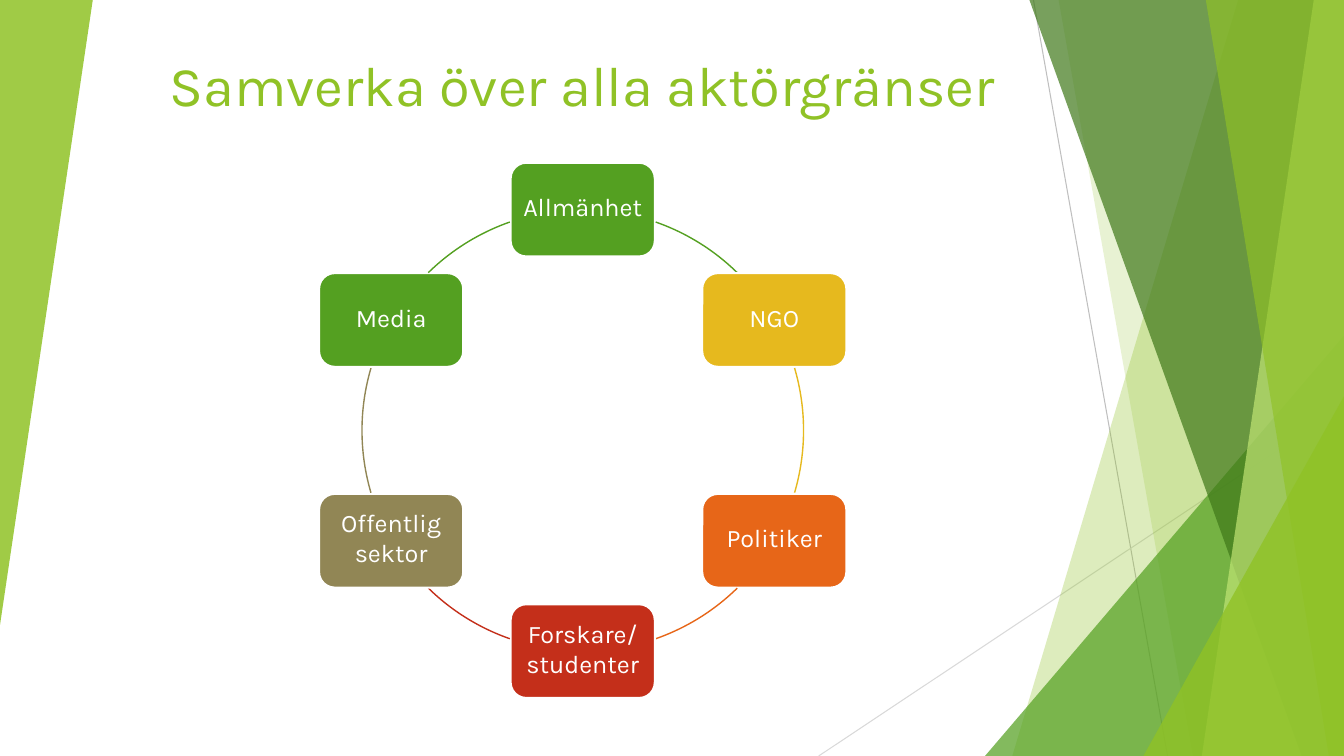
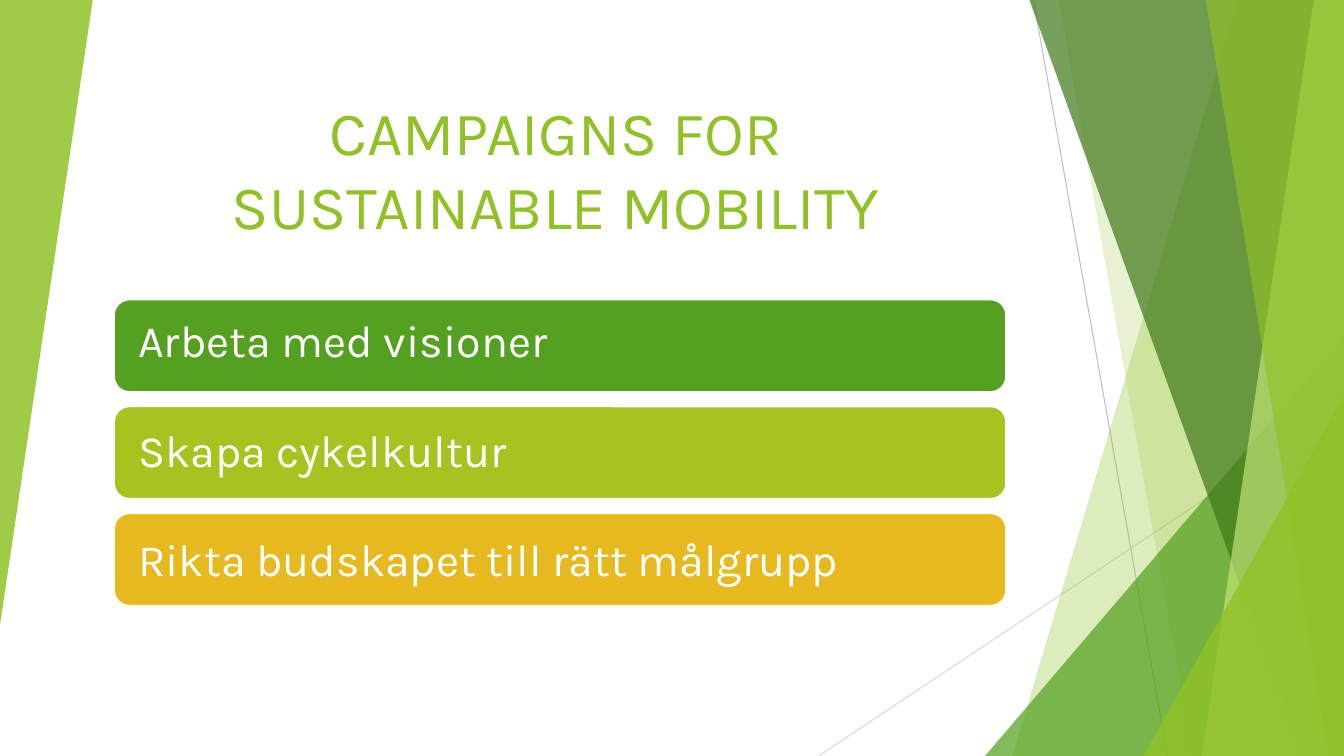
from lxml import etree
from pptx import Presentation
from pptx import util as u
from pptx.dml.color import RGBColor
from pptx.enum import shapes, text
from pptx.oxml.ns import qn

WIDTH, HEIGHT = 13.33, 7.5
FONT = "Karla"
COLORS = {
    "white": "FFFFFF", "lime": "90C226", "green": "54A021", "forest": "3F7819",
    "pale": "C0E474", "olive": "A5C41F", "yellow": "E6B91E", "orange": "E76618",
    "red": "C42F1A", "tan": "918655", "grey": "BFBFBF", "light_grey": "D9D9D9",
}


class Deck:
    """Holds the style and the slide being drawn."""

    def __init__(self):
        self.prs = Presentation()
        self.prs.slide_width = u.Inches(WIDTH)
        self.prs.slide_height = u.Inches(HEIGHT)
        self.s = None

    def rgb(self, name):
        return RGBColor.from_string(COLORS[name])

    def add_slide(self, layout):
        self.s = self.prs.slides.add_slide(self.prs.slide_layouts[layout])
        self.background()

    # Elements
    def paint(self, sp, fill=None, alpha=100, line=None, width=1.5):
        sp.shadow.inherit = False
        if fill:
            sp.fill.solid()
            sp.fill.fore_color.rgb = self.rgb(fill)
            if alpha < 100:
                color = sp._element.spPr.find(qn("a:solidFill"))[0]
                etree.SubElement(color, qn("a:alpha"), val=str(alpha * 1000))
        else:
            sp.fill.background()
        if line:
            sp.line.color.rgb = self.rgb(line)
            sp.line.width = u.Pt(width)
        else:
            sp.line.fill.background()

    def shape(self, kind, x, y, w, h):
        return self.s.shapes.add_shape(
            kind, u.Inches(x), u.Inches(y), u.Inches(w), u.Inches(h))

    def line(self, x1, y1, x2, y2, color):
        cx = self.s.shapes.add_connector(
            shapes.MSO_CONNECTOR.STRAIGHT,
            u.Inches(x1), u.Inches(y1), u.Inches(x2), u.Inches(y2))
        cx.line.color.rgb = self.rgb(color)
        cx.line.width = u.Pt(0.75)
        etree.SubElement(cx._element.spPr, qn("a:effectLst"))

    def shard(self, top, bottom, color, alpha):
        """Full-height band from a slanted left edge to the right slide edge."""
        fb = self.s.shapes.build_freeform(u.Inches(top), 0)
        fb.add_line_segments([(u.Inches(x), u.Inches(y)) for x, y in (
            (WIDTH, 0), (WIDTH, HEIGHT), (bottom, HEIGHT))])
        self.paint(fb.convert_to_shape(), color, alpha)

    def triangle(self, x, y, w, h, color, alpha, rotation=0):
        sp = self.shape(shapes.MSO_SHAPE.ISOSCELES_TRIANGLE, x, y, w, h)
        sp.adjustments[0] = 1
        sp.rotation = rotation
        self.paint(sp, color, alpha)

    def box(self, x, y, w, h, color):
        sp = self.shape(shapes.MSO_SHAPE.ROUNDED_RECTANGLE, x, y, w, h)
        self.paint(sp, color, line="white")
        return sp

    def arc(self, cx, cy, radius, start, end, color):
        sp = self.shape(shapes.MSO_SHAPE.ARC, cx - radius, cy - radius,
                        2 * radius, 2 * radius)
        # Adjustments count in units of 100000; angles in 1/60000 degree
        for i, angle in enumerate((start, end)):
            sp.adjustments[i] = angle % 360 * 0.6
        self.paint(sp, line=color, width=1)

    def add_text(self, p, words, size, color="white",
                 align=text.PP_ALIGN.CENTER):
        p.alignment = align
        p.line_spacing = 1.0
        for i, part in enumerate(words.split("\n")):
            if i:
                p.add_line_break()
            r = p.add_run()
            r.text = part
            r.font.name = FONT
            r.font.size = u.Pt(size)
            r.font.color.rgb = self.rgb(color)

    def place(self, sp, x, y, w, h, anchor):
        """Move a placeholder and bring it to the front."""
        sp.left, sp.top = u.Inches(x), u.Inches(y)
        sp.width, sp.height = u.Inches(w), u.Inches(h)
        self.s.shapes._spTree.append(sp._element)
        tf = sp.text_frame
        tf.word_wrap = True
        tf.auto_size = text.MSO_AUTO_SIZE.NONE
        tf.vertical_anchor = anchor
        return tf

    def title(self, words, x, y, h, size):
        tf = self.place(self.s.shapes.title, x, y, 8.49, h,
                        text.MSO_ANCHOR.BOTTOM)
        self.add_text(tf.paragraphs[0], words, size, "lime")

    def body(self, items, x, y, w, h, size, gap):
        tf = self.place(self.s.placeholders[1], x, y, w, h,
                        text.MSO_ANCHOR.TOP)
        for i, item in enumerate(items):
            p = tf.add_paragraph() if i else tf.paragraphs[0]
            p.space_before = u.Pt(gap if i else 0)
            self.add_text(p, item, size, align=text.PP_ALIGN.LEFT)

    def label(self, sp, words, size):
        tf = sp.text_frame
        tf.word_wrap = True
        tf.vertical_anchor = text.MSO_ANCHOR.MIDDLE
        tf.margin_left = tf.margin_right = u.Inches(0.05)
        tf.margin_top, tf.margin_bottom = u.Inches(0), u.Inches(0.06)
        self.add_text(tf.paragraphs[0], words, size)

    # Shared facet background
    def background(self):
        self.line(10.25, 0, 11.58, HEIGHT, "grey")
        self.line(WIDTH, 4.03, 8.12, HEIGHT, "light_grey")
        self.shard(12.28, 10.04, "lime", 30)
        self.shard(10.5, 11.83, "lime", 20)
        self.triangle(9.77, 3.33, 3.56, 4.17, "green", 72)
        self.shard(10.21, 12.91, "forest", 70)
        self.shard(13.03, 11.92, "pale", 70)
        self.shard(11.96, 13.18, "lime", 65)
        self.triangle(11.34, 3.93, 1.99, 3.57, "lime", 80)
        self.triangle(0, 0, 0.92, 6.2, "lime", 85, rotation=180)


def actors_slide(deck):
    deck.add_slide(5)
    cx, cy, radius = 5.78, 4.27, 2.19
    w, h = 1.43, 0.93
    # Clockwise from the top: label, colour, column, row (in half radii)
    actors = [
        ("Allmänhet", "green", 0, -2),
        ("NGO", "yellow", 1, -1),
        ("Politiker", "orange", 1, 1),
        ("Forskare/\nstudenter", "red", 0, 2),
        ("Offentlig\nsektor", "tan", -1, 1),
        ("Media", "green", -1, -1),
    ]
    # Visible arcs in the gaps between neighbouring boxes
    gaps = [(-70.7, -45.6), (-16.4, 16.4), (45.6, 70.7),
            (109.3, 134.4), (163.6, 196.4), (225.6, 250.7)]
    for (name, color, col, row), (start, end) in zip(actors, gaps):
        sp = deck.box(cx + col * 1.9 - w / 2, cy + row * radius / 2 - h / 2,
                      w, h, color)
        deck.label(sp, name, 18)
        deck.arc(cx, cy, radius, start, end, color)
    deck.title("Samverka över alla aktörgränser", 1.53, 0.02, 1.2, 40)


def campaigns_slide(deck):
    deck.add_slide(0)
    for i, color in enumerate(("green", "olive", "yellow")):
        deck.box(1.13, 2.97 + i * 1.06, 8.85, 0.92, color)
    deck.title("CAMPAIGNS FOR SUSTAINABLE MOBILITY", 1.27, 0.65, 1.8, 44)
    deck.body(["Arbeta med visioner", "Skapa cykelkultur",
               "Rikta budskapet till rätt målgrupp"],
              1.27, 3.05, 8.49, 3, size=32, gap=40)


def main():
    deck = Deck()
    actors_slide(deck)
    campaigns_slide(deck)
    deck.prs.save("out.pptx")


if __name__ == "__main__":
    main()
